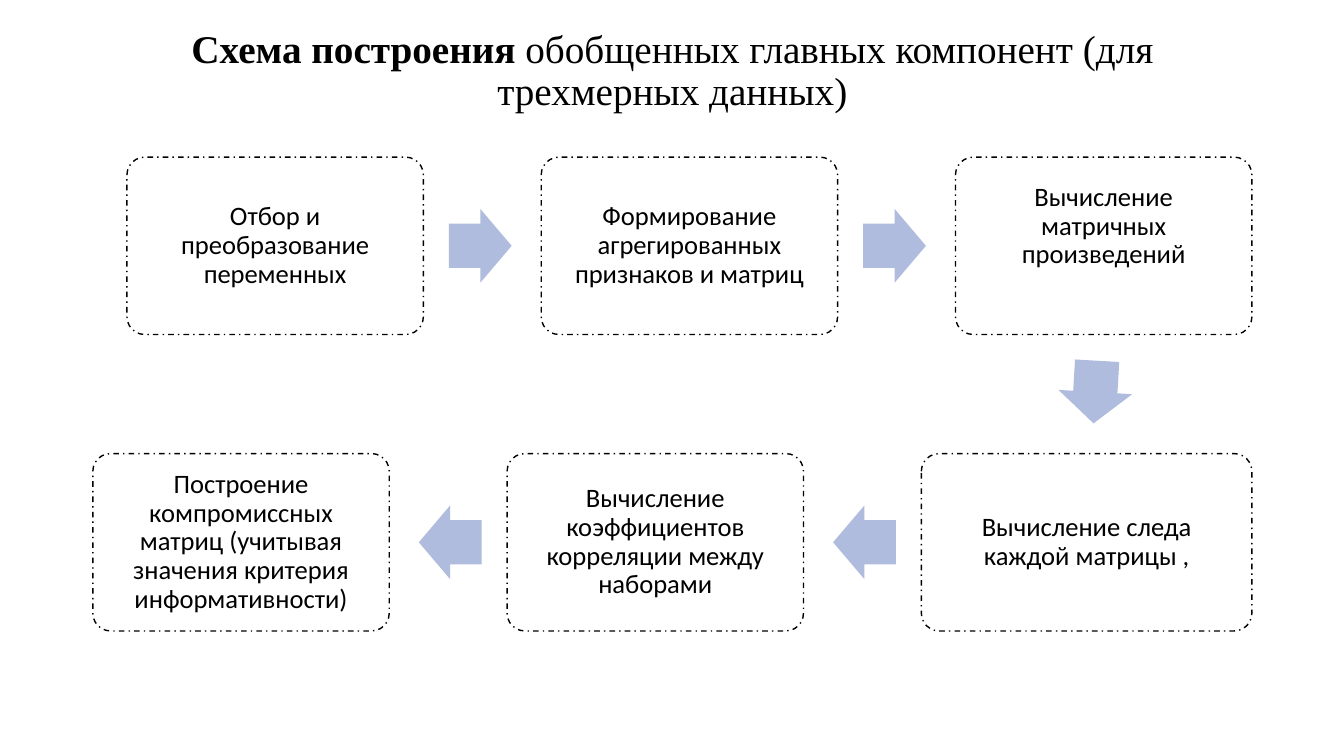
from collections import namedtuple
from math import atan2, cos, degrees, sin

from pptx import Presentation
from pptx.dml.color import RGBColor
from pptx.enum.dml import MSO_LINE_DASH_STYLE as Dash
from pptx.enum.shapes import MSO_SHAPE as Preset
from pptx.enum.text import MSO_ANCHOR as Anchor, PP_ALIGN as Align
from pptx.util import Cm, Pt

# Content
TITLE = [
    ("Схема построения ", True),
    ("обобщенных главных компонент (для трехмерных данных)", False),
]
TOP_STEPS = [
    "Отбор и преобразование переменных",
    "Формирование агрегированных признаков и матриц",
    "Вычисление матричных произведений",
]
BOTTOM_STEPS = [  # read from right to left
    "Вычисление следа каждой матрицы ,",
    "Вычисление коэффициентов корреляции между наборами",
    "Построение компромиссных матриц (учитывая значения критерия информативности)",
]

THEME = {
    "text": RGBColor(0, 0, 0),
    "outline": RGBColor(0, 0, 0),
    "arrow": RGBColor(0xB0, 0xBC, 0xDE),
    "title_font": "Times New Roman",
    "title_size": Pt(28),
    "step_font": "Calibri",
    "step_size": Pt(19),
    "line_spacing": 0.9,
}

# Geometry in centimetres
Box = namedtuple("Box", "left top width height")
BOX_WIDTH, WIDE_BOX_WIDTH, BOX_HEIGHT = 7.47, 8.33, 4.47
COLUMN_PITCH = 10.44
TOP_LEFT, TOP_Y = 3.2, 3.96
BOTTOM_LEFT, BOTTOM_Y = 2.34, 11.43
ARROW_LENGTH, ARROW_BREADTH = 1.58, 1.86
ARROW_SETBACK = 0.05
STEP_INSET = 0.33
RAISED_STEP, RAISED_INSET = 2, 1.3  # this step's text sits above the middle


def format_runs(paragraph, font_name, size):
    paragraph.alignment = Align.CENTER
    paragraph.line_spacing = THEME["line_spacing"]
    for run in paragraph.runs:
        run.font.name = font_name
        run.font.size = size
        run.font.color.rgb = THEME["text"]


def add_title(slide):
    text_frame = slide.shapes.add_textbox(
        Cm(2.34), Cm(0.99), Cm(29.21), Cm(1.63)).text_frame
    text_frame.word_wrap = True
    text_frame.vertical_anchor = Anchor.MIDDLE
    paragraph = text_frame.paragraphs[0]
    for text, bold in TITLE:
        run = paragraph.add_run()
        run.text = text
        run.font.bold = bold
    format_runs(paragraph, THEME["title_font"], THEME["title_size"])


def step_boxes():
    top = [Box(TOP_LEFT + column * COLUMN_PITCH, TOP_Y, BOX_WIDTH, BOX_HEIGHT)
           for column in range(3)]
    bottom = [Box(BOTTOM_LEFT + column * COLUMN_PITCH, BOTTOM_Y,
                  WIDE_BOX_WIDTH if column == 2 else BOX_WIDTH, BOX_HEIGHT)
              for column in (2, 1, 0)]
    return top + bottom


def add_step(slide, box, text, bottom_inset):
    shape = slide.shapes.add_shape(Preset.ROUNDED_RECTANGLE, *map(Cm, box))
    shape.adjustments[0] = 0.1
    shape.shadow.inherit = False
    shape.fill.background()
    shape.line.color.rgb = THEME["outline"]
    shape.line.width = Pt(1)
    shape.line.dash_style = Dash.DASH_DOT
    text_frame = shape.text_frame
    text_frame.word_wrap = True
    text_frame.vertical_anchor = Anchor.MIDDLE
    text_frame.margin_left = text_frame.margin_right = Cm(STEP_INSET)
    text_frame.margin_top = Cm(STEP_INSET)
    text_frame.margin_bottom = Cm(bottom_inset)
    text_frame.text = text
    format_runs(text_frame.paragraphs[0], THEME["step_font"], THEME["step_size"])


def edge_share(box, dx, dy):
    """Share of the way (dx, dy) from the box centre that lies inside the box."""
    return 0.5 / max(abs(dx) / box.width, abs(dy) / box.height)


def add_arrow(slide, start, end):
    start_x, start_y = start.left + start.width / 2, start.top + start.height / 2
    dx = end.left + end.width / 2 - start_x
    dy = end.top + end.height / 2 - start_y
    angle = atan2(dy, dx)
    # Middle of the gap between the two boxes, set back a little
    middle = (edge_share(start, dx, dy) + 1 - edge_share(end, dx, dy)) / 2
    center_x = start_x + middle * dx - ARROW_SETBACK * cos(angle)
    center_y = start_y + middle * dy - ARROW_SETBACK * sin(angle)
    shape = slide.shapes.add_shape(
        Preset.RIGHT_ARROW,
        Cm(center_x - ARROW_LENGTH / 2), Cm(center_y - ARROW_BREADTH / 2),
        Cm(ARROW_LENGTH), Cm(ARROW_BREADTH))
    shape.adjustments[0] = 0.6
    shape.adjustments[1] = 0.5
    shape.rotation = degrees(angle)
    shape.shadow.inherit = False
    shape.fill.solid()
    shape.fill.fore_color.rgb = THEME["arrow"]
    shape.line.fill.background()


def main():
    presentation = Presentation()
    presentation.slide_width, presentation.slide_height = Cm(33.87), Cm(19.05)
    slide = presentation.slides.add_slide(presentation.slide_layouts[6])

    add_title(slide)

    # Steps, then the arrows that join each one to the next
    boxes = step_boxes()
    for index, (box, text) in enumerate(zip(boxes, TOP_STEPS + BOTTOM_STEPS)):
        add_step(slide, box, text,
                 RAISED_INSET if index == RAISED_STEP else STEP_INSET)
    for start, end in zip(boxes, boxes[1:]):
        add_arrow(slide, start, end)

    presentation.save("out.pptx")


if __name__ == "__main__":
    main()
